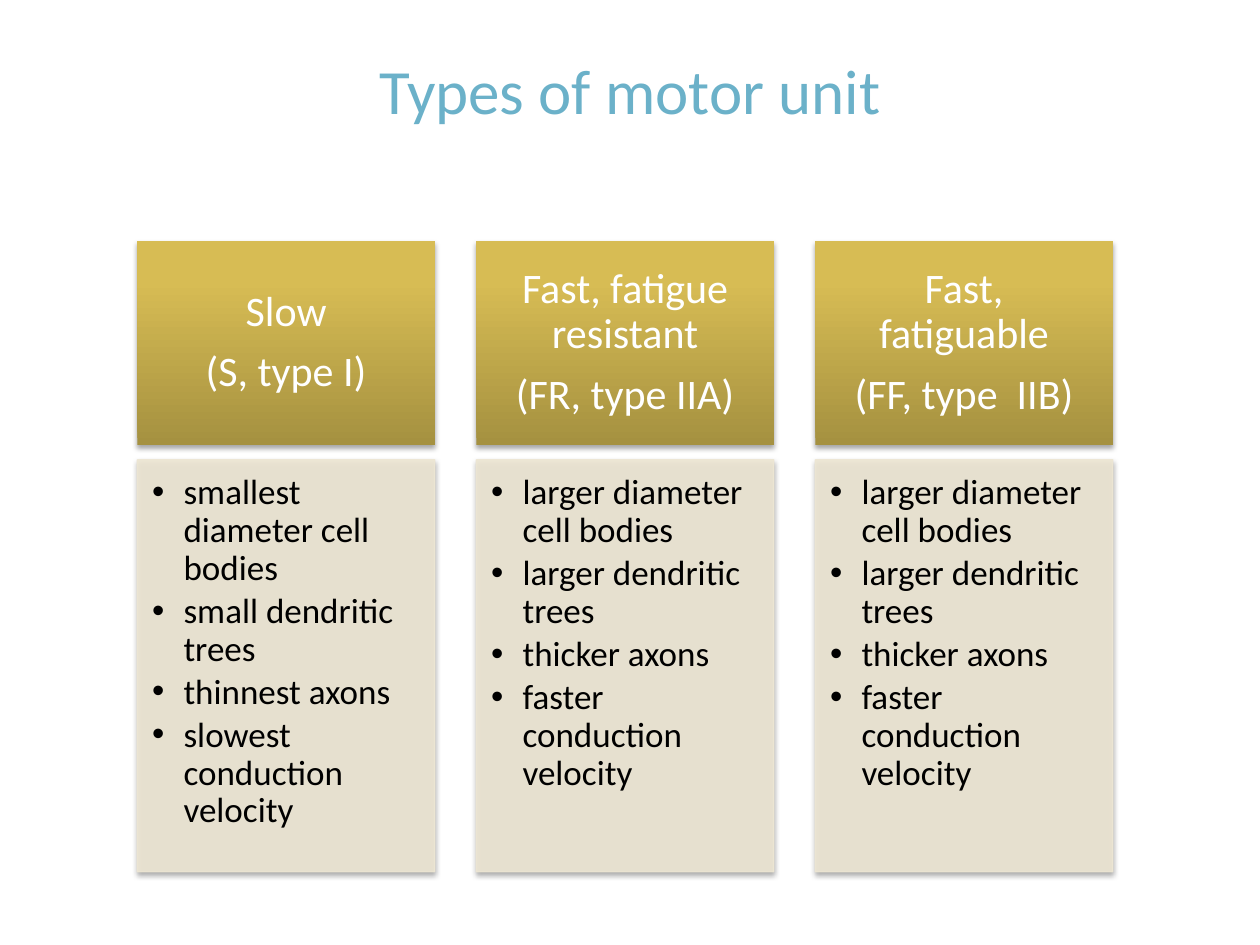
from copy import deepcopy

from lxml import etree
from pptx import Presentation
from pptx.dml.color import RGBColor
from pptx.enum.shapes import MSO_SHAPE
from pptx.enum.text import MSO_ANCHOR, PP_ALIGN
from pptx.oxml.ns import qn
from pptx.util import Pt

RECTANGLE = MSO_SHAPE.RECTANGLE
TOP, MIDDLE = MSO_ANCHOR.TOP, MSO_ANCHOR.MIDDLE
LEFT, CENTER = PP_ALIGN.LEFT, PP_ALIGN.CENTER

COLORS = {
    "title": "6BB1C9",
    "gold_dark": "A59140",
    "gold": "D7BC54",
    "gold_light": "DABF52",
    "sand": "EDE6D3",
    "white": "FFFFFF",
    "black": "000000",
}
FONT = "Calibri"
GRADIENT = [(0, "gold_dark"), (0.8, "gold"), (1, "gold_light")]

TITLE_BOX = (36, 5.8, 648, 90)
COLUMNS_BOX = (78.5, 137.5, 557.4, 360.7)
COLUMN_WIDTH, HEADER_HEIGHT, BODY_HEIGHT = 170, 116.6, 235.4

HEADER_FRAME = {
    "word_wrap": True, "vertical_anchor": MIDDLE,
    "margin_left": Pt(13.44), "margin_right": Pt(13.44),
    "margin_top": Pt(7.68), "margin_bottom": Pt(7.68),
}
BODY_FRAME = {
    "word_wrap": True, "vertical_anchor": TOP,
    "margin_left": Pt(8.4), "margin_right": Pt(11.2),
    "margin_top": Pt(8.4), "margin_bottom": Pt(12.6),
}
HEADER_PARAGRAPH = {"alignment": CENTER, "line_spacing": 0.9, "space_after": Pt(8.4)}
BODY_PARAGRAPH = {"alignment": LEFT, "line_spacing": 0.9, "space_after": Pt(3), "level": 1}

FAST_FEATURES = [
    "larger diameter cell bodies",
    "larger dendritic trees",
    "thicker axons",
    "faster conduction velocity",
]
MOTOR_UNITS = [
    (["Slow", "(S, type I)"],
     ["smallest diameter cell bodies", "small dendritic trees",
      "thinnest axons", "slowest conduction velocity"]),
    (["Fast, fatigue resistant", "(FR, type IIA)"], FAST_FEATURES),
    (["Fast, fatiguable", "(FF, type  IIB)"], FAST_FEATURES),
]


def color(name):
    """Return the named colour."""
    return RGBColor.from_string(COLORS[name])


def apply_format(target, values):
    """Set each attribute in values on the target."""
    for name, value in values.items():
        setattr(target, name, value)


def place(shape, box):
    """Move a shape to a box given in points."""
    apply_format(shape, dict(zip(("left", "top", "width", "height"), map(Pt, box))))


def write_text(shape, lines, frame_format, paragraph_format, size, color_name):
    """Fill a shape with one formatted paragraph per line and return them."""
    frame = shape.text_frame
    frame.text = "\n".join(lines)
    apply_format(frame, frame_format)
    for paragraph in frame.paragraphs:
        apply_format(paragraph, paragraph_format)
        for run in paragraph.runs:
            apply_format(run.font, {"name": FONT, "size": Pt(size)})
            run.font.color.rgb = color(color_name)
    return frame.paragraphs


def add_bullet(paragraph):
    """Give a paragraph a hanging round bullet."""
    properties = paragraph._p.get_or_add_pPr()
    properties.set("marL", str(Pt(18)))
    properties.set("indent", str(-Pt(18)))
    etree.SubElement(properties, qn("a:buFont"), typeface="Arial")
    etree.SubElement(properties, qn("a:buChar"), char="•")


def add_shadow(shape):
    """Give a shape a soft shadow below it."""
    shape.shadow.inherit = False
    effects = shape._element.spPr.find(qn("a:effectLst"))
    shadow = etree.SubElement(
        effects, qn("a:outerShdw"), blurRad=str(Pt(3.1)), dist=str(Pt(1.8)),
        dir="5400000", rotWithShape="0")
    black = etree.SubElement(shadow, qn("a:srgbClr"), val=COLORS["black"])
    etree.SubElement(black, qn("a:alpha"), val="35000")


def add_rectangle(slide, box):
    """Add a shadowed rectangle in the box."""
    shape = slide.shapes.add_shape(RECTANGLE, *map(Pt, box))
    add_shadow(shape)
    return shape


def fill_gold(shape):
    """Fill a shape with the gold gradient, dark at the bottom."""
    shape.fill.gradient()
    shape.fill.gradient_angle = 90
    stops = shape._element.spPr.find(qn("a:gradFill")).find(qn("a:gsLst"))
    stops.append(deepcopy(stops[-1]))
    for stop, (position, name) in zip(shape.fill.gradient_stops, GRADIENT):
        stop.position = position
        stop.color.rgb = color(name)


def fill_sand(shape):
    """Give a shape a slightly transparent sand fill and outline."""
    shape.fill.solid()
    shape.fill.fore_color.rgb = color("sand")
    shape.line.color.rgb = color("sand")
    shape.line.width = Pt(0.75)
    properties = shape._element.spPr
    for part in (properties.find(qn("a:solidFill")), properties.find(qn("a:ln"))):
        for value in part.iter(qn("a:srgbClr")):
            etree.SubElement(value, qn("a:alpha"), val="90000")


def add_header(slide, box, lines):
    """Add the gold header naming a motor unit."""
    shape = add_rectangle(slide, box)
    fill_gold(shape)
    shape.line.fill.background()
    write_text(shape, lines, HEADER_FRAME, HEADER_PARAGRAPH, 24, "white")


def add_features(slide, box, lines):
    """Add the sand panel listing a motor unit's features."""
    shape = add_rectangle(slide, box)
    fill_sand(shape)
    for paragraph in write_text(shape, lines, BODY_FRAME, BODY_PARAGRAPH, 20, "black"):
        add_bullet(paragraph)


def add_columns(slide, box):
    """Spread the motor unit columns evenly over the box."""
    left, top, width, height = box
    pitch = (width - COLUMN_WIDTH) / (len(MOTOR_UNITS) - 1)
    body_top = top + height - BODY_HEIGHT
    for index, (names, features) in enumerate(MOTOR_UNITS):
        column_left = left + index * pitch
        add_header(slide, (column_left, top, COLUMN_WIDTH, HEADER_HEIGHT), names)
        add_features(slide, (column_left, body_top, COLUMN_WIDTH, BODY_HEIGHT), features)


def add_title(slide, box):
    """Place and format the slide title."""
    title = slide.shapes.title
    place(title, box)
    write_text(title, ["Types of motor unit"],
               {"word_wrap": True, "vertical_anchor": MIDDLE},
               {"alignment": CENTER}, 36, "title")


def main():
    """Build and save the presentation."""
    presentation = Presentation()
    apply_format(presentation, {"slide_width": Pt(720), "slide_height": Pt(540)})
    slide = presentation.slides.add_slide(presentation.slide_layouts[5])
    add_title(slide, TITLE_BOX)
    add_columns(slide, COLUMNS_BOX)
    presentation.save("out.pptx")


if __name__ == "__main__":
    main()
